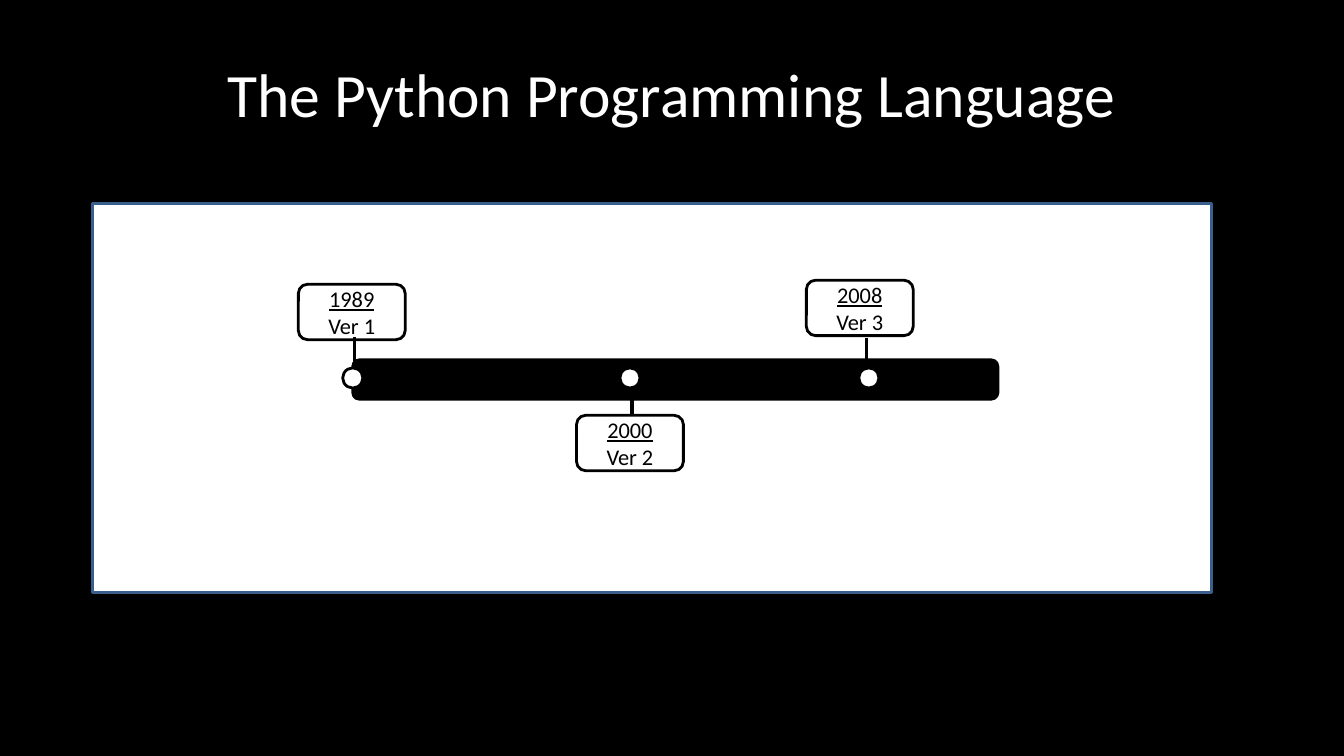
from dataclasses import dataclass

from lxml.etree import SubElement
from pptx import Presentation
from pptx.dml.color import RGBColor
from pptx.enum.shapes import MSO_CONNECTOR, MSO_SHAPE
from pptx.enum.text import MSO_ANCHOR, PP_ALIGN
from pptx.oxml.ns import qn
from pptx.shapes.autoshape import Shape
from pptx.slide import Slide
from pptx.text.text import TextFrame
from pptx.util import Inches, Pt

COLORS = {"black": "000000", "white": "FFFFFF", "panel_edge": "3A5F8C"}
FONT = "Calibri"

WIDTH, HEIGHT = Inches(13.33), Inches(7.5)
COL, ROW = WIDTH / 40, HEIGHT / 30

DOT_W, DOT_H, DOT_ROW = 0.6, 0.8, 15
LABEL_W, LABEL_H = 3.18, 2.2


@dataclass(frozen=True)
class Box:
    """Left and width in columns, top and height in rows."""
    left: float
    top: float
    width: float
    height: float

    def emu(self) -> tuple[int, int, int, int]:
        return (round(self.left * COL), round(self.top * ROW),
                round(self.width * COL), round(self.height * ROW))


@dataclass(frozen=True)
class Release:
    year: str
    version: str
    dot_col: float
    label_left: float
    label_top: float
    stem_col: float
    stem_top: float
    stem_bottom: float


TITLE = Box(2, 1.2, 36, 5)
PANEL = Box(2.76, 8.08, 33.3, 15.44)
BAR = Box(10.5, 14.28, 19.2, 1.56)
RELEASES = [
    Release("1989", "Ver 1", 10.5, 8.88, 11.28, 10.56, 13.36, 14.44),
    Release("2000", "Ver 2", 18.75, 17.16, 16.48, 18.81, 15.4, 16.48),
    Release("2008", "Ver 3", 25.86, 24, 11.12, 25.8, 13.4, 14.52),
]


def rgb(name: str) -> RGBColor:
    return RGBColor.from_string(COLORS[name])


def add_box(s: Slide, kind: MSO_SHAPE, box: Box, fill: str = "white",
            line: str = "black") -> Shape:
    sp = s.shapes.add_shape(kind, *box.emu())
    sp.shadow.inherit = False
    sp.fill.solid()
    sp.fill.fore_color.rgb = rgb(fill)
    sp.line.color.rgb = rgb(line)
    sp.line.width = Pt(2)
    return sp


def write_lines(tf: TextFrame, lines: list[str], size: int, color: str) -> None:
    tf.word_wrap = True
    tf.vertical_anchor = MSO_ANCHOR.MIDDLE
    tf.text = "\n".join(lines)
    for p in tf.paragraphs:
        p.alignment = PP_ALIGN.CENTER
        p.font.name = FONT
        p.font.size = Pt(size)
        p.font.color.rgb = rgb(color)


def add_dot(s: Slide, release: Release) -> None:
    add_box(s, MSO_SHAPE.OVAL, Box(release.dot_col - DOT_W / 2,
                                   DOT_ROW - DOT_H / 2, DOT_W, DOT_H))


def add_label(s: Slide, release: Release) -> None:
    sp = add_box(s, MSO_SHAPE.FLOWCHART_ALTERNATE_PROCESS,
                 Box(release.label_left, release.label_top, LABEL_W, LABEL_H))
    tf = sp.text_frame
    write_lines(tf, [release.year, release.version], 16, "black")
    tf.paragraphs[0].font.underline = True


def add_stem(s: Slide, release: Release) -> None:
    x = round(release.stem_col * COL)
    stem = s.shapes.add_connector(
        MSO_CONNECTOR.STRAIGHT, x, round(release.stem_top * ROW),
        x, round(release.stem_bottom * ROW))
    stem.line.color.rgb = rgb("black")
    stem.line.width = Pt(2.25)
    SubElement(stem._element.spPr, qn("a:effectLst"))


def main() -> None:
    prs = Presentation()
    prs.slide_width, prs.slide_height = WIDTH, HEIGHT
    s = prs.slides.add_slide(prs.slide_layouts[6])
    s.background.fill.solid()
    s.background.fill.fore_color.rgb = rgb("black")

    add_box(s, MSO_SHAPE.RECTANGLE, PANEL, line="panel_edge")
    title = s.shapes.add_textbox(*TITLE.emu())
    write_lines(title.text_frame, ["The Python Programming Language"], 44, "white")
    add_box(s, MSO_SHAPE.FLOWCHART_ALTERNATE_PROCESS, BAR, fill="black")
    for draw in (add_dot, add_label, add_stem):
        for release in RELEASES:
            draw(s, release)

    prs.save("out.pptx")


if __name__ == "__main__":
    main()
